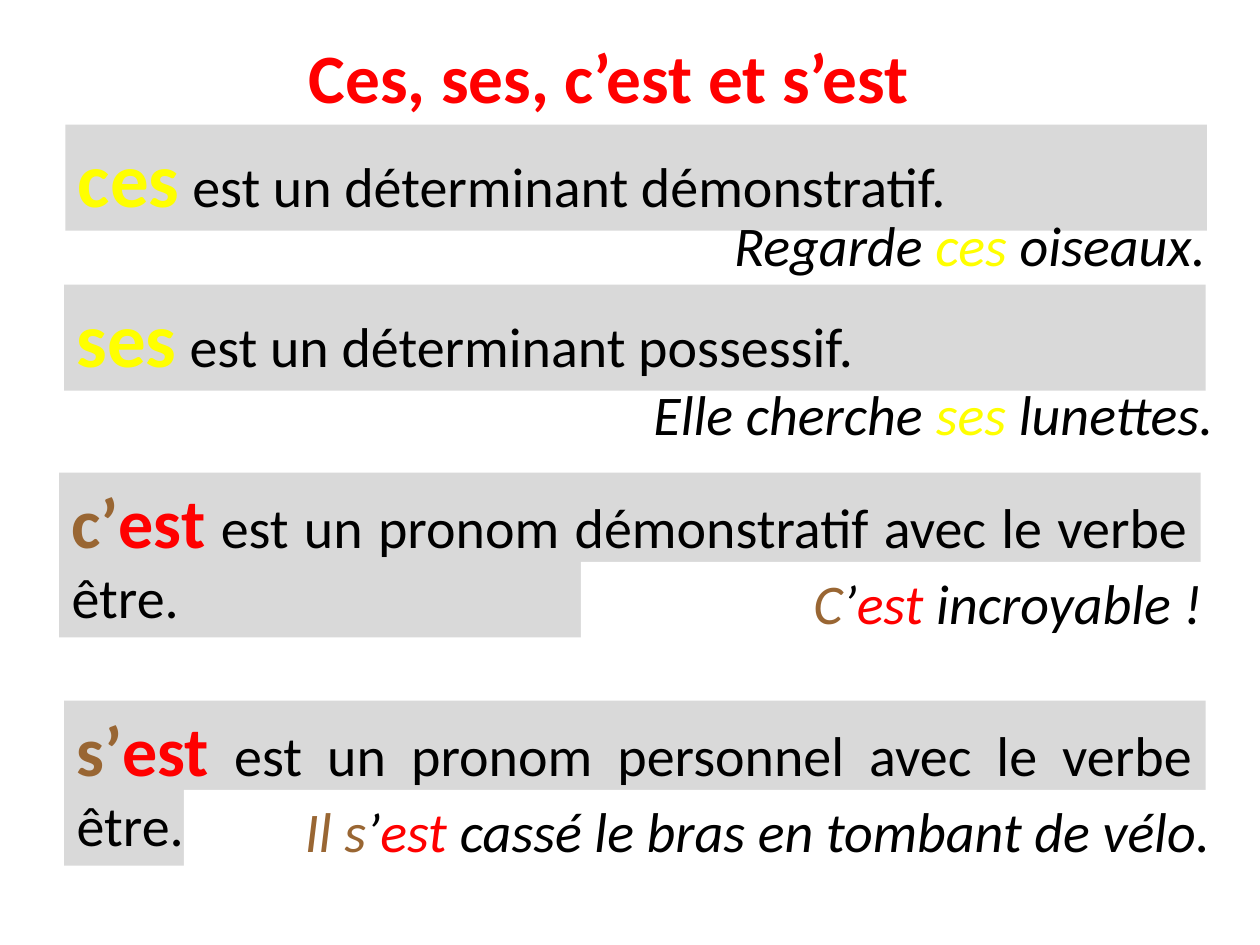
from lxml import etree
from pptx import Presentation
from pptx.dml.color import RGBColor
from pptx.enum.text import MSO_ANCHOR, MSO_AUTO_SIZE, PP_ALIGN
from pptx.oxml.ns import qn
from pptx.util import Inches, Pt

BLACK = RGBColor(0x00, 0x00, 0x00)
RED = RGBColor(0xFF, 0x00, 0x00)
YELLOW = RGBColor(0xFF, 0xFF, 0x00)
BROWN = RGBColor(0x99, 0x66, 0x33)
GREY = RGBColor(0xD9, 0xD9, 0xD9)
WHITE = RGBColor(0xFF, 0xFF, 0xFF)

CENTER, RIGHT, JUSTIFY = PP_ALIGN.CENTER, PP_ALIGN.RIGHT, PP_ALIGN.JUSTIFY
MIDDLE = MSO_ANCHOR.MIDDLE
FIT_SHAPE, NO_FIT = MSO_AUTO_SIZE.SHAPE_TO_FIT_TEXT, MSO_AUTO_SIZE.NONE

FONT = "Calibri"
RULE_WIDTH = 9.06
EXAMPLE_HEIGHT = 0.64
OUTLINE_WIDTH = Pt(0.75)

TITLE = "Ces, ses, c’est et s’est"
TITLE_BOX = (0.5, 0.3, 8.67, 0.61)
TITLE_FORMAT = {"size": Pt(39.6), "bold": True}
BODY_FORMAT = {"size": Pt(32), "bold": False}
EXAMPLE_FORMAT = {"size": Pt(32), "italic": True}

LESSONS = [
    {
        "rule_place": (0.52, 0.99, 0.84),
        "word": [("ces", YELLOW)],
        "word_size": 44,
        "rule": " est un déterminant démonstratif. ",
        "example_place": (5.58, 1.62, 4.09),
        "example": [("Regarde ", BLACK), ("ces", YELLOW), (" oiseaux.", BLACK)],
        "example_fill": None,
    },
    {
        "rule_place": (0.51, 2.26, 0.84),
        "word": [("ses", YELLOW)],
        "word_size": 44,
        "rule": " est un déterminant possessif. ",
        "example_place": (4.7, 2.96, 5.03),
        "example": [("Elle cherche ", BLACK), ("ses", YELLOW), (" lunettes.", BLACK)],
        "example_fill": None,
    },
    {
        "rule_place": (0.47, 3.75, 1.31),
        "word": [("c’", BROWN), ("est", RED)],
        "word_size": 40,
        "rule": " est un pronom démonstratif avec le verbe être. ",
        "example_place": (4.61, 4.46, 5.03),
        "example": [("C", BROWN), ("’", BLACK), ("est", RED), (" incroyable !", BLACK)],
        "example_fill": WHITE,
    },
    {
        "rule_place": (0.51, 5.56, 1.31),
        "word": [("s’", BROWN), ("est", RED)],
        "word_size": 40,
        "rule": " est un pronom personnel avec le verbe être. ",
        "example_place": (1.46, 6.27, 8.25),
        "example": [("Il s", BROWN), ("’", BLACK), ("est", RED),
                    (" cassé le bras en tombant de vélo.", BLACK)],
        "example_fill": WHITE,
    },
]


def add_outline(run):
    line = etree.Element(qn("a:ln"), w=str(int(OUTLINE_WIDTH)))
    fill = etree.SubElement(line, qn("a:solidFill"))
    etree.SubElement(fill, qn("a:srgbClr"), val=str(BLACK))
    run.font._element.insert(0, line)


def add_run(paragraph, text, color, formats, outlined=False):
    run = paragraph.add_run()
    run.text = text
    for name, value in {"name": FONT, **formats}.items():
        setattr(run.font, name, value)
    run.font.color.rgb = color
    if outlined:
        add_outline(run)


def add_box(slide, box, alignment, fill):
    shape = slide.shapes.add_textbox(*map(Inches, box))
    if fill is not None:
        shape.fill.solid()
        shape.fill.fore_color.rgb = fill
    shape.text_frame.word_wrap = True
    shape.text_frame.auto_size = FIT_SHAPE
    paragraph = shape.text_frame.paragraphs[0]
    paragraph.alignment = alignment
    return paragraph


def add_title(slide):
    title = slide.shapes.title
    for name, value in zip(("left", "top", "width", "height"), TITLE_BOX):
        setattr(title, name, Inches(value))
    frame = title.text_frame
    frame.auto_size = NO_FIT
    frame.vertical_anchor = MIDDLE
    paragraph = frame.paragraphs[0]
    paragraph.alignment = CENTER
    add_run(paragraph, TITLE, RED, TITLE_FORMAT)


def add_lesson(slide, lesson):
    left, top, height = lesson["rule_place"]
    paragraph = add_box(slide, (left, top, RULE_WIDTH, height), JUSTIFY, GREY)
    word_format = {"size": Pt(lesson["word_size"]), "bold": True}
    for text, color in lesson["word"]:
        add_run(paragraph, text, color, word_format, outlined=True)
    add_run(paragraph, lesson["rule"], BLACK, BODY_FORMAT)

    box = (*lesson["example_place"], EXAMPLE_HEIGHT)
    paragraph = add_box(slide, box, RIGHT, lesson["example_fill"])
    for text, color in lesson["example"]:
        add_run(paragraph, text, color, EXAMPLE_FORMAT, outlined=color == YELLOW)


def main():
    presentation = Presentation()
    presentation.slide_width = Inches(10)
    presentation.slide_height = Inches(7.5)
    slide = presentation.slides.add_slide(presentation.slide_layouts[5])
    add_title(slide)
    for lesson in LESSONS:
        add_lesson(slide, lesson)
    presentation.save("out.pptx")


if __name__ == "__main__":
    main()
